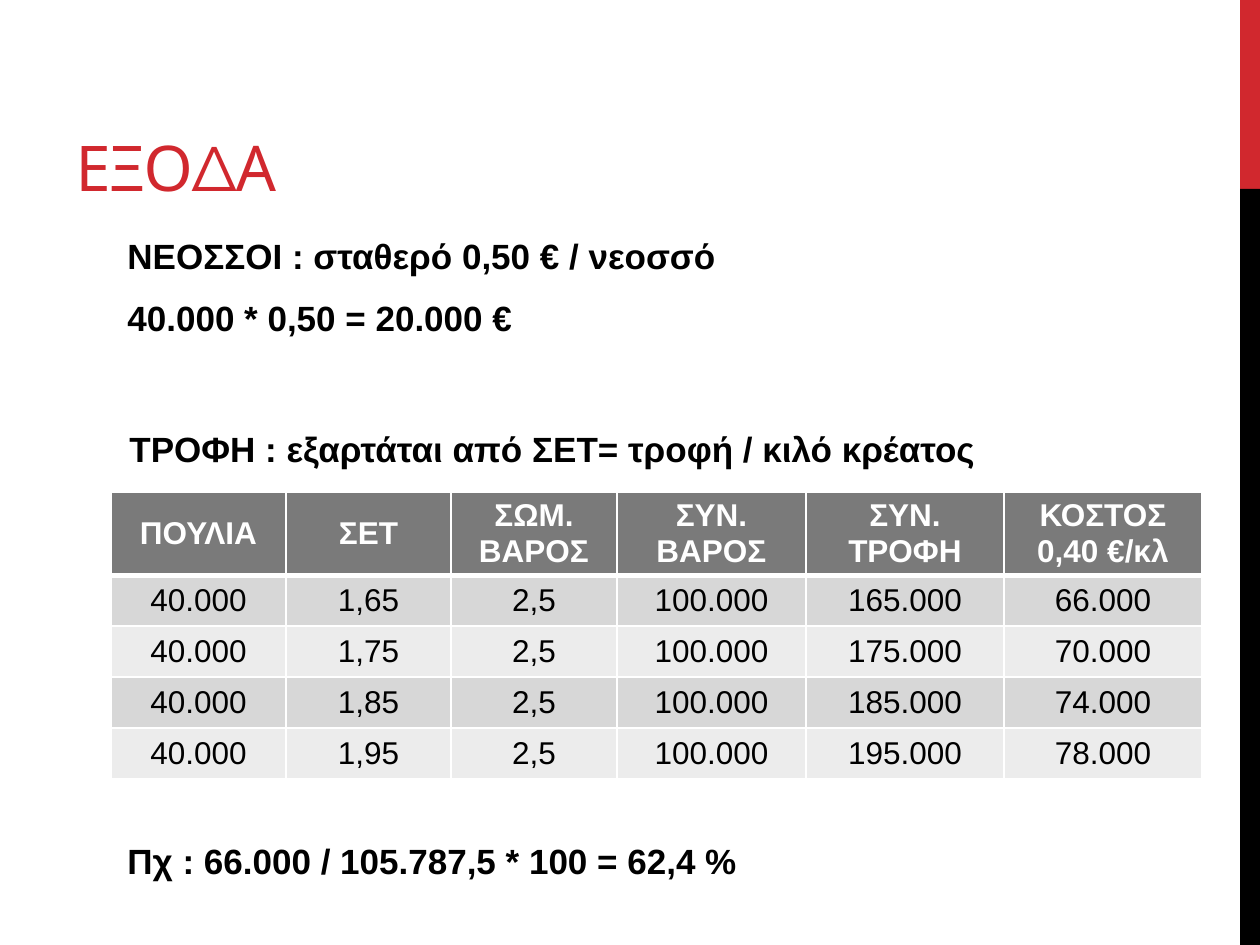
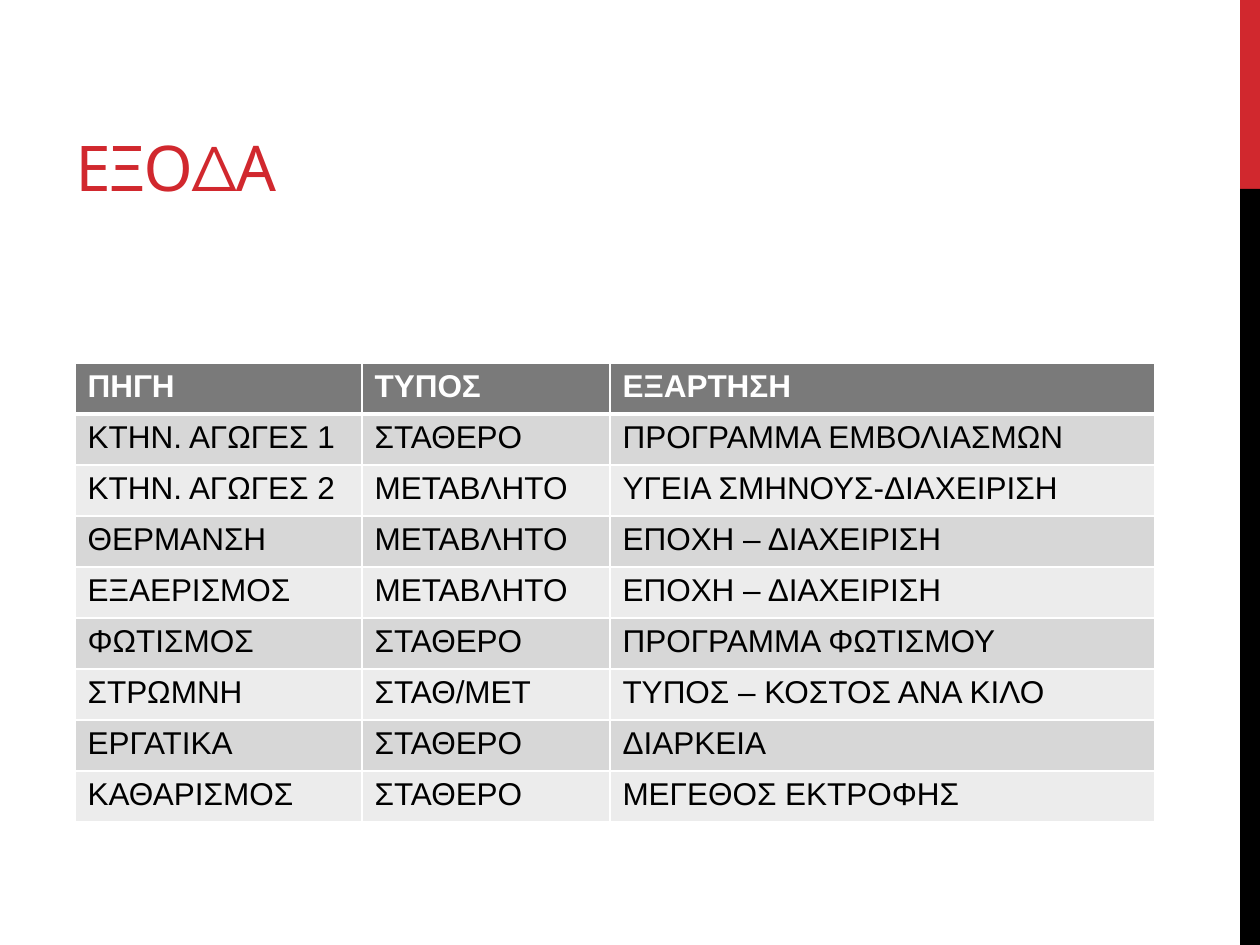
from pptx import Presentation
from pptx.dml.color import RGBColor as Rgb
from pptx.enum.shapes import MSO_SHAPE as Kind
from pptx.enum.text import MSO_ANCHOR as Anchor, MSO_AUTO_SIZE as Fit, PP_ALIGN as Align
from pptx.oxml import parse_xml
from pptx.oxml.ns import nsdecls
from pptx.util import Emu, Pt

HUES = {"red": "D1282E", "black": "000000", "white": "FFFFFF",
        "head": "7A7A7A", "odd": "D7D7D7", "even": "ECECEC"}
TITLE_BOX = (63, 21, 1053, 189)
BANDS = [("red", (1240, 0, 20, 189)), ("black", (1240, 189, 20, 756))]
ROW = 51

TITLE = {"name": "Montserrat", "size": Pt(36), "bold": False, "hue": "red"}
NOTE = {"name": "Arial", "size": Pt(20), "bold": True, "hue": "black"}
HEAD = {"name": "Arial", "size": Pt(18), "bold": True, "hue": "white"}
BODY = {**HEAD, "bold": False, "hue": "black"}
GAPS = {"space_before": Pt(3), "space_after": Pt(6), "line_spacing": 1.1}

SLIDES = [
    {
        "title": "ΕΞΟΔΑ",
        "notes": [
            ((117, 417, 1050, 72), ["ΤΡΟΦΗ : εξαρτάται από ΣΕΤ= τροφή / κιλό κρέατος"]),
            ((115, 224, 1050, 189), ["ΝΕΟΣΣΟΙ : σταθερό 0,50 € / νεοσσό",
                                     "40.000 * 0,50 = 20.000 €"]),
            ((115, 829, 1050, 72), ["Πχ : 66.000 / 105.787,5 * 100 = 62,4 %"]),
        ],
        "table": {
            "at": (111, 492),
            "cols": [175, 165, 166, 189, 198, 198],
            "anchor": Anchor.MIDDLE,
            "aligns": (Align.CENTER, Align.CENTER),
            "rows": [
                ("ΠΟΥΛΙΑ", "ΣΕΤ", "ΣΩΜ. ΒΑΡΟΣ", "ΣΥΝ. ΒΑΡΟΣ", "ΣΥΝ. ΤΡΟΦΗ",
                 "ΚΟΣΤΟΣ\n0,40 €/κλ"),
                ("40.000", "1,65", "2,5", "100.000", "165.000", "66.000"),
                ("40.000", "1,75", "2,5", "100.000", "175.000", "70.000"),
                ("40.000", "1,85", "2,5", "100.000", "185.000", "74.000"),
                ("40.000", "1,95", "2,5", "100.000", "195.000", "78.000"),
            ],
        },
    },
    {
        "title": "ΕΞΟΔΑ",
        "notes": [],
        "table": {
            "at": (75, 363),
            "cols": [287, 248, 545],
            "anchor": Anchor.TOP,
            "aligns": (Align.JUSTIFY, Align.LEFT),
            "rows": [
                ("ΠΗΓΗ", "ΤΥΠΟΣ", "ΕΞΑΡΤΗΣΗ"),
                ("ΚΤΗΝ. ΑΓΩΓΕΣ 1", "ΣΤΑΘΕΡΟ", "ΠΡΟΓΡΑΜΜΑ ΕΜΒΟΛΙΑΣΜΩΝ"),
                ("ΚΤΗΝ. ΑΓΩΓΕΣ 2", "ΜΕΤΑΒΛΗΤΟ", "ΥΓΕΙΑ ΣΜΗΝΟΥΣ-ΔΙΑΧΕΙΡΙΣΗ"),
                ("ΘΕΡΜΑΝΣΗ", "ΜΕΤΑΒΛΗΤΟ", "ΕΠΟΧΗ – ΔΙΑΧΕΙΡΙΣΗ"),
                ("ΕΞΑΕΡΙΣΜΟΣ", "ΜΕΤΑΒΛΗΤΟ", "ΕΠΟΧΗ – ΔΙΑΧΕΙΡΙΣΗ"),
                ("ΦΩΤΙΣΜΟΣ", "ΣΤΑΘΕΡΟ", "ΠΡΟΓΡΑΜΜΑ ΦΩΤΙΣΜΟΥ"),
                ("ΣΤΡΩΜΝΗ", "ΣΤΑΘ/ΜΕΤ", "ΤΥΠΟΣ – ΚΟΣΤΟΣ ΑΝΑ ΚΙΛΟ"),
                ("ΕΡΓΑΤΙΚΑ", "ΣΤΑΘΕΡΟ", "ΔΙΑΡΚΕΙΑ"),
                ("ΚΑΘΑΡΙΣΜΟΣ", "ΣΤΑΘΕΡΟ", "ΜΕΓΕΘΟΣ ΕΚΤΡΟΦΗΣ"),
            ],
        },
    },
]


def px(n):
    return Emu(round(n * 914400 / 126))


def tint(name):
    return Rgb.from_string(HUES[name])


def paint(fill, name):
    fill.solid()
    fill.fore_color.rgb = tint(name)


def style(frame, font, para):
    """Apply font and paragraph values to every paragraph of a frame."""
    for par in frame.paragraphs:
        for key, val in para.items():
            setattr(par, key, val)
        for run in par.runs:
            for key, val in font.items():
                if key == "hue":
                    run.font.color.rgb = tint(val)
                else:
                    setattr(run.font, key, val)


def add_title(slide, text):
    box = slide.shapes.title
    box.left, box.top, box.width, box.height = map(px, TITLE_BOX)
    frame = box.text_frame
    frame.text = text
    frame.auto_size, frame.vertical_anchor = Fit.NONE, Anchor.BOTTOM
    style(frame, TITLE, {"alignment": Align.LEFT})
    frame.paragraphs[0].runs[0].font._element.set("spc", "-60")


def add_bands(slide):
    for hue, box in BANDS:
        band = slide.shapes.add_shape(Kind.RECTANGLE, *map(px, box))
        band.shadow.inherit = False
        paint(band.fill, hue)
        band.line.fill.background()


def add_note(slide, box, lines):
    frame = slide.shapes.add_textbox(*map(px, box)).text_frame
    frame.word_wrap = True
    frame.text = "\n".join(lines)
    style(frame, NOTE, GAPS)


def edge(cell, row):
    """Draw white cell borders, thick between the head and the body."""
    wide = {"T": 3 if row == 1 else 1, "B": 3 if row == 0 else 1}
    props = cell._tc.get_or_add_tcPr()
    for spot, side in enumerate("LRTB"):
        props.insert(spot, parse_xml(
            f'<a:ln{side} {nsdecls("a")} w="{Pt(wide.get(side, 1))}"><a:solidFill>'
            f'<a:srgbClr val="{HUES["white"]}"/></a:solidFill></a:ln{side}>'))


def add_grid(slide, data):
    rows, cols = data["rows"], data["cols"]
    size = sum(cols), ROW * len(rows)
    grid = slide.shapes.add_table(len(rows), len(cols), *map(px, data["at"] + size)).table
    grid.horz_banding = False
    for col, width in zip(grid.columns, cols):
        col.width = px(width)
    for r, texts in enumerate(rows):
        grid.rows[r].height = px(ROW)
        hue = "head" if r == 0 else "odd" if r % 2 else "even"
        for c, text in enumerate(texts):
            cell = grid.cell(r, c)
            cell.text = text
            cell.vertical_anchor = data["anchor"]
            paint(cell.fill, hue)
            edge(cell, r)
            style(cell.text_frame, BODY if r else HEAD,
                  {"alignment": data["aligns"][min(r, 1)]})


def main():
    deck = Presentation()
    deck.slide_width, deck.slide_height = px(1260), px(945)
    for data in SLIDES:
        slide = deck.slides.add_slide(deck.slide_layouts[5])
        add_bands(slide)
        add_title(slide, data["title"])
        add_grid(slide, data["table"])
        for box, lines in data["notes"]:
            add_note(slide, box, lines)
    deck.save("out.pptx")


if __name__ == "__main__":
    main()
